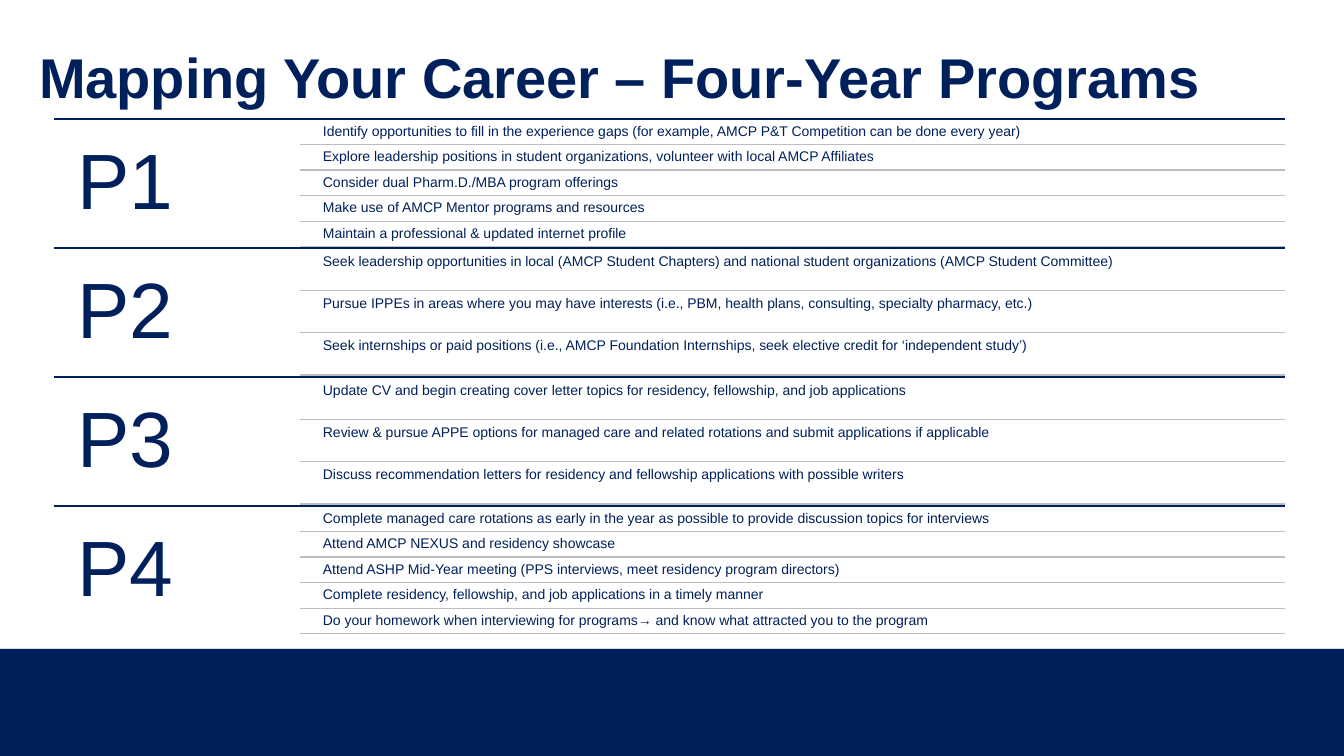
from pptx import Presentation
from pptx.dml.color import RGBColor
from pptx.enum.shapes import MSO_CONNECTOR, MSO_SHAPE
from pptx.enum.text import MSO_ANCHOR
from pptx.oxml.ns import qn
from pptx.util import Pt
from lxml.etree import SubElement

SCALE = 914400 / 100.8
COLORS = {"navy": "00205B", "rule": "BDBDC4", "edge": "F8F8F8"}
FONTS = {
    "title": {"size": Pt(40), "bold": True},
    "year": {"size": Pt(56), "bold": False},
    "step": {"size": Pt(10), "bold": False},
}
YEARS = {
    "P1": [
        "Identify opportunities to fill in the experience gaps (for example, AMCP P&T Competition can be done every year)",
        "Explore leadership positions in student organizations, volunteer with local AMCP Affiliates",
        "Consider dual Pharm.D./MBA program offerings",
        "Make use of AMCP Mentor programs and resources",
        "Maintain a professional & updated internet profile",
    ],
    "P2": [
        "Seek leadership opportunities in local (AMCP Student Chapters) and national student organizations (AMCP Student Committee)",
        "Pursue IPPEs in areas where you may have interests (i.e., PBM, health plans, consulting, specialty pharmacy, etc.)",
        "Seek internships or paid positions (i.e., AMCP Foundation Internships, seek elective credit for ‘independent study’)",
    ],
    "P3": [
        "Update CV and begin creating cover letter topics for residency, fellowship, and job applications",
        "Review & pursue APPE options for managed care and related rotations and submit applications if applicable",
        "Discuss recommendation letters for residency and fellowship applications with possible writers",
    ],
    "P4": [
        "Complete managed care rotations as early in the year as possible to provide discussion topics for interviews",
        "Attend AMCP NEXUS and residency showcase",
        "Attend ASHP Mid-Year meeting (PPS interviews, meet residency program directors)",
        "Complete residency, fellowship, and job applications in a timely manner",
        "Do your homework when interviewing for programs→ and know what attracted you to the program",
    ],
}


def px(*sizes):
    """Turn pixel lengths into EMU."""
    return [round(size * SCALE) for size in sizes]


def color(name):
    """Look up a palette color."""
    return RGBColor.from_string(COLORS[name])


def add_text(slide, box, text, style, inset, anchor=MSO_ANCHOR.TOP):
    """Add one styled line of text in a box."""
    frame = slide.shapes.add_textbox(*px(*box)).text_frame
    frame.word_wrap = True
    frame.vertical_anchor = anchor
    for side in ("left", "top", "right", "bottom"):
        setattr(frame, f"margin_{side}", px(inset)[0])
    line = frame.paragraphs[0]
    line.line_spacing = 0.9
    run = line.add_run()
    run.text = text
    for key, value in {"name": "Arial", **FONTS[style]}.items():
        setattr(run.font, key, value)
    run.font.color.rgb = color("navy")


def add_rule(slide, left, right, top, tint):
    """Draw a level rule between two x positions."""
    rule = slide.shapes.add_connector(
        MSO_CONNECTOR.STRAIGHT, *px(left, top, right, top))
    rule.line.color.rgb = color(tint)
    rule.line.width = Pt(1)
    SubElement(rule._element.spPr, qn("a:effectLst"))


def add_band(slide, box, tint):
    """Fill a plain band."""
    band = slide.shapes.add_shape(MSO_SHAPE.RECTANGLE, *px(*box))
    band.shadow.inherit = False
    band.fill.solid()
    band.fill.fore_color.rgb = color(tint)
    band.line.fill.background()


def add_footer(slide, box):
    """Place the navy footer under its pale top edge."""
    left, top, width, height = box
    add_band(slide, box, "edge")
    add_band(slide, (left, top + 1, width, height - 1), "navy")


def add_year(slide, box, year, steps):
    """Place a year label beside its evenly spaced, ruled steps."""
    left, top, width, height = box
    right, split = left + width, left + width // 5
    row = height / (len(steps) + 0.05 * (len(steps) + 1))
    gap = 0.05 * row
    add_rule(slide, left, right, top, "navy")
    add_text(slide, (left, top, split - left, height), year, "year", 23)
    for index, step in enumerate(steps):
        start = top + gap + index * (row + gap)
        add_text(slide, (split + 19, start, right - split - 19, row), step, "step", 4)
        add_rule(slide, split, right, start + row, "rule")


def add_years(slide, box):
    """Stack the years in equal shares of the box."""
    left, top, width, height = box
    share = height // len(YEARS)
    for index, (year, steps) in enumerate(YEARS.items()):
        add_year(slide, (left, top + index * share, width, share), year, steps)


def main():
    """Build and save the career slide."""
    deck = Presentation()
    deck.slide_width, deck.slide_height = px(1344, 756)
    slide = deck.slides.add_slide(deck.slide_layouts[6])
    add_footer(slide, (0, 648, 1344, 108))
    add_text(slide, (39, 7, 1269, 146), "Mapping Your Career – Four-Year Programs",
             "title", 0, MSO_ANCHOR.MIDDLE)
    add_years(slide, (54, 119, 1231, 516))
    deck.save("out.pptx")


if __name__ == "__main__":
    main()
